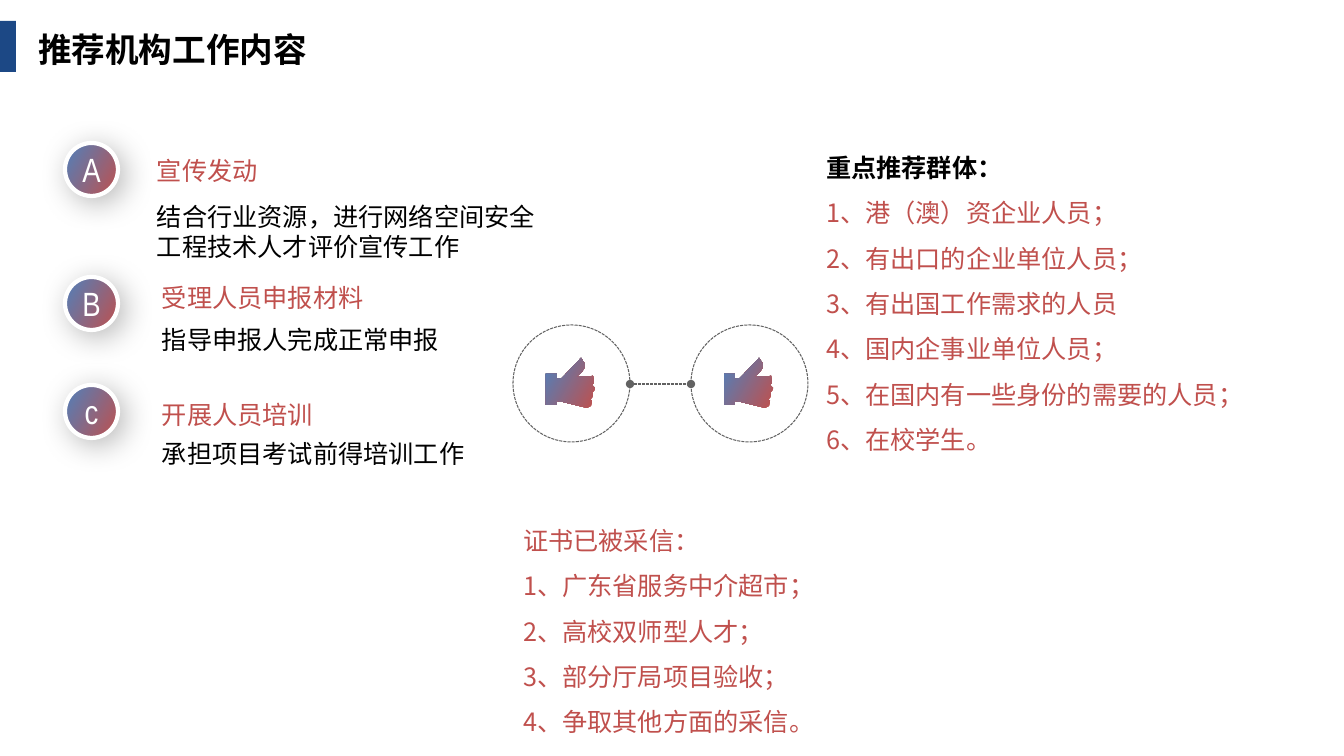
from lxml.etree import SubElement as Sub
from pptx import Presentation
from pptx.dml.color import RGBColor
from pptx.enum.dml import MSO_LINE as Dash
from pptx.enum.shapes import MSO_CONNECTOR as Conn, MSO_SHAPE as Kind
from pptx.enum.text import MSO_ANCHOR as Anchor, MSO_AUTO_SIZE as Fit, PP_ALIGN as Align
from pptx.oxml.ns import qn
from pptx.util import Pt

PX = 914400 / 100.8
SANS, BODY, NARROW = "Noto Sans CJK SC", "Calibri", "Arial Narrow"
RED, BLUE, NAVY, GRAY = "C0504D", "4F81BD", "1C4885", "626262"
BLACK, WHITE = "000000", "FFFFFF"
BLEND = "blend"

TASKS = [
    # letter, badge top, text left, head top, head, note top, note
    ("A", 143, 147, 150, "宣传发动", 196, "结合行业资源，进行网络空间安全工程技术人才评价宣传工作"),
    ("B", 277, 152, 277, "受理人员申报材料", 319, "指导申报人完成正常申报"),
    ("c", 385, 152, 394, "开展人员培训", 433, "承担项目考试前得培训工作"),
]
GROUPS = [
    "重点推荐群体：",
    "1、港（澳）资企业人员；",
    "2、有出口的企业单位人员；",
    "3、有出国工作需求的人员",
    "4、国内企事业单位人员；",
    "5、在国内有一些身份的需要的人员；",
    "6、在校学生。",
]
TRUST = [
    "证书已被采信：",
    "1、广东省服务中介超市；",
    "2、高校双师型人才；",
    "3、部分厅局项目验收；",
    "4、争取其他方面的采信。",
]
THUMB = [
    (47, 18), (48, 25), (46, 27), (49, 30), (48, 33), (46, 34), (47, 36),
    (46, 40), (44, 41), (46, 43), (45, 48), (41, 50), (17, 44), (11, 43),
    (11, 47), (0, 47), (0, 16), (11, 16), (11, 21), (16, 20), (35, 0),
    (39, 6), (38, 11), (35, 15), (30, 19),
]


def px(*vals):
    return [round(v * PX) for v in vals]


def rgb(code):
    return RGBColor.from_string(code)


def blend(fill, angle, start=0):
    """Fill from red to blue; the angle runs clockwise."""
    fill.gradient()
    fill.gradient_angle = 360 - angle
    for stop, code, pos in zip(fill.gradient_stops, (RED, BLUE), (start, 1)):
        stop.color.rgb = rgb(code)
        stop.position = pos


def style(para, size, color, face=SANS, bold=False):
    for run in para.runs:
        font = run.font
        font.size, font.bold, font.name = Pt(size), bold, face
        if color == BLEND:
            blend(font.fill, 45, 0.29)
        else:
            font.fill.solid()
            font.fill.fore_color.rgb = rgb(color)
        if face != NARROW:
            font._element.find(qn("a:latin")).addnext(
                font._element.makeelement(qn("a:ea"), {"typeface": SANS}))


def write(box, spot, lines, lead, size=18, color=BLEND, face=SANS, bold=False):
    """Place a box and set its lines, with lead as line height in points."""
    box.left, box.top, box.width, box.height = px(*spot)
    frame = box.text_frame
    frame.word_wrap, frame.auto_size = True, Fit.NONE
    frame.vertical_anchor = Anchor.TOP
    frame.text = "\n".join(lines)
    for para in frame.paragraphs:
        props = para._p.get_or_add_pPr()
        props.set("marL", "0")
        props.set("indent", "0")
        Sub(props, qn("a:buNone"))
        para.alignment = Align.LEFT
        para.space_before = Pt(0)
        para.line_spacing = Pt(lead)
        style(para, size, color, face, bold)


def label(slide, spot, text, **look):
    write(slide.shapes.add_textbox(0, 0, 0, 0), spot, [text], 21.6, **look)


def shape(slide, kind, *spot):
    item = slide.shapes.add_shape(kind, *px(*spot))
    item.shadow.inherit = False
    return item


def dash(line):
    line.color.rgb = rgb(GRAY)
    line.width = Pt(0.75)
    line.dash_style = Dash.SQUARE_DOT


def badge(slide, top, letter):
    disc = shape(slide, Kind.OVAL, 65, top, 53, 53)
    blend(disc.fill, 210)
    disc.line.color.rgb = rgb(WHITE)
    disc.line.width = Pt(3)
    glow = Sub(disc._element.spPr.find(qn("a:effectLst")), qn("a:outerShdw"),
               blurRad=str(Pt(22)), dist=str(Pt(6)), dir="2700000",
               algn="tl", rotWithShape="0")
    tint = Sub(glow, qn("a:srgbClr"), val=BLACK)
    Sub(tint, qn("a:alpha"), val="28000")
    frame = disc.text_frame
    frame.margin_left = frame.margin_right = 0
    frame.margin_top = frame.margin_bottom = 0
    frame.word_wrap, frame.vertical_anchor = False, Anchor.MIDDLE
    frame.text = letter
    frame.paragraphs[0].alignment = Align.CENTER
    style(frame.paragraphs[0], 24, WHITE, NARROW)


def thumb(slide, left, top):
    """Draw a dashed ring with a thumb-up sign in it."""
    ring = shape(slide, Kind.OVAL, left, top, 117, 117)
    ring.fill.background()
    dash(ring.line)
    dots = [(left + 33 + x, top + 33 + y) for x, y in THUMB]
    pen = slide.shapes.build_freeform(*dots[0], scale=PX)
    pen.add_line_segments(dots[1:], close=True)
    hand = pen.convert_to_shape()
    hand.shadow.inherit = False
    blend(hand.fill, 210)
    hand.line.fill.background()


def link(slide, *ends):
    wire = slide.shapes.add_connector(Conn.STRAIGHT, *px(*ends))
    dash(wire.line)
    line = wire.line._get_or_add_ln()
    for end in ("a:headEnd", "a:tailEnd"):
        Sub(line, qn(end), type="oval")
    Sub(wire._element.spPr, qn("a:effectLst"))


def main():
    deck = Presentation()
    deck.slide_width, deck.slide_height = px(1344, 756)
    slide = deck.slides.add_slide(deck.slide_layouts[3])
    title, groups, trust = list(slide.placeholders)[:3]

    write(title, (28, 24, 485, 50), ["推荐机构工作内容"], 28.8,
          size=24, color=BLACK, bold=True)
    bar = shape(slide, Kind.RECTANGLE, 0, 21, 16, 51)
    bar.fill.solid()
    bar.fill.fore_color.rgb = rgb(NAVY)
    bar.line.fill.background()

    for left in (513, 691):
        thumb(slide, left, 325)
    link(slide, 630, 384, 691, 384)

    for letter, top, left, high, head, low, note in TASKS:
        badge(slide, top, letter)
        label(slide, (left, high, 353, 40), head)
        label(slide, (left, low, 402, 71), note, color=BLACK, face=BODY)

    write(groups, (816, 132, 520, 331), GROUPS, 32.4)
    style(groups.text_frame.paragraphs[0], 18, BLACK, bold=True)
    write(trust, (513, 505, 672, 239), TRUST, 32.4)
    deck.save("out.pptx")


if __name__ == "__main__":
    main()
